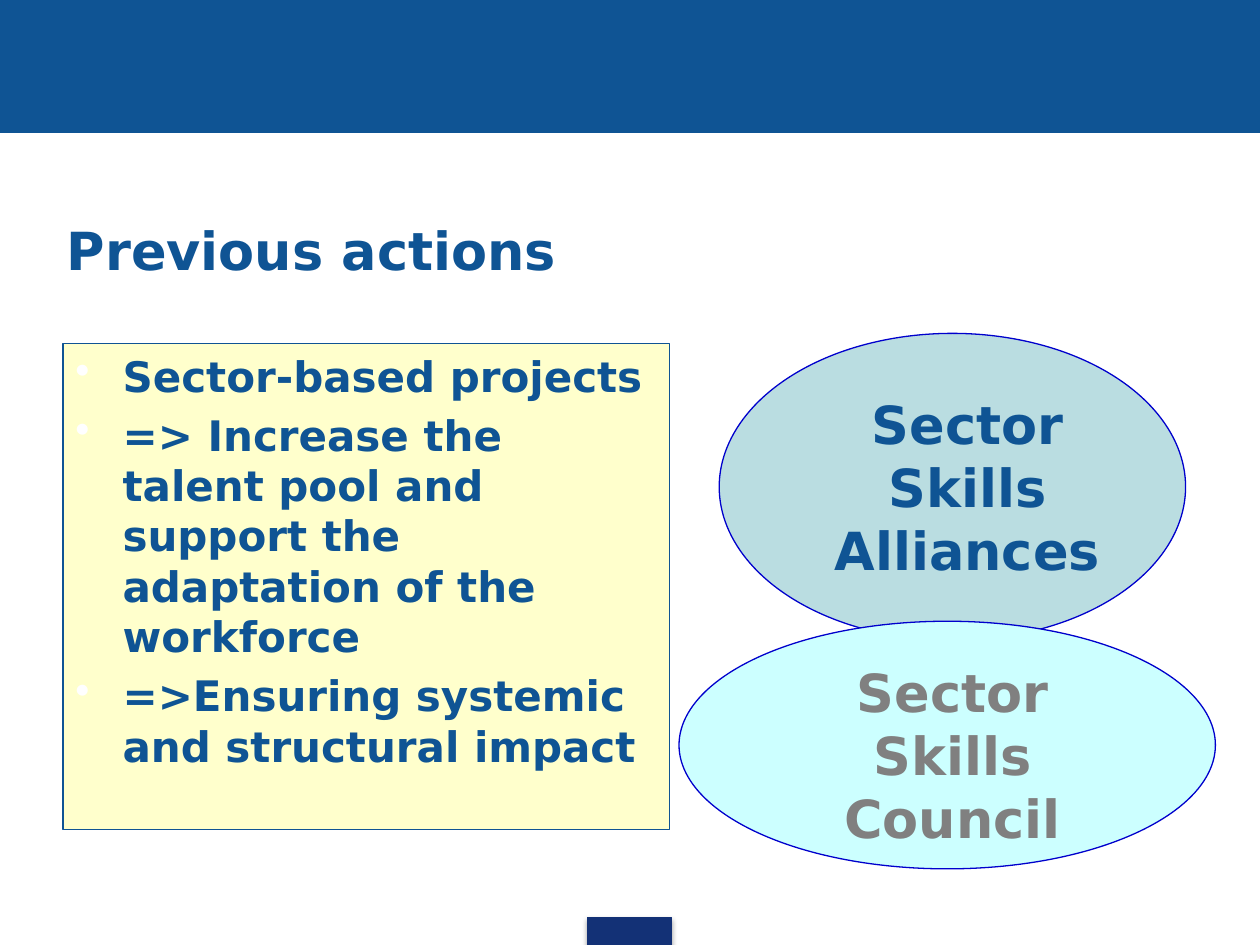
from dataclasses import dataclass

from lxml.etree import SubElement
from pptx import Presentation
from pptx.dml.color import RGBColor
from pptx.enum.shapes import MSO_SHAPE as Shape
from pptx.enum.text import MSO_ANCHOR as Anchor, MSO_AUTO_SIZE as AutoSize, PP_ALIGN as Align
from pptx.oxml.ns import qn
from pptx.util import Pt

COLORS = {
    "blue": "0F5494",
    "navy": "133176",
    "cream": "FFFFCC",
    "teal": "BADDE1",
    "aqua": "CCFFFF",
    "outline": "0000CC",
    "gray": "808080",
    "white": "FFFFFF",
    "black": "000000",
}
FONT = {"name": "DejaVu Sans", "bold": True}
BULLET_INDENT = 27


@dataclass(frozen=True)
class Box:
    left: float
    top: float
    width: float
    height: float

    def emu(self) -> tuple:
        return tuple(Pt(v) for v in (self.left, self.top, self.width, self.height))


@dataclass(frozen=True)
class Bubble:
    oval: Box
    label: Box
    text: str
    fill: str
    color: str


BUBBLES = (
    Bubble(Box(411, 190.5, 266.5, 175.5), Box(462.2, 220.3, 181.4, 116.6),
           "Sector Skills Alliances", "teal", "blue"),
    Bubble(Box(388, 355, 306.5, 141.5), Box(453.6, 373.7, 181.4, 116.6),
           "Sector Skills Council", "aqua", "gray"),
)
ACTIONS = (
    "Sector-based projects",
    "=> Increase the talent pool and support the adaptation of the workforce",
    "=>Ensuring systemic and structural impact",
)


def rgb(name: str) -> RGBColor:
    return RGBColor.from_string(COLORS[name])


def add_filled(s, kind, box: Box, fill: str, line: str):
    sp = s.shapes.add_shape(kind, *box.emu())
    sp.shadow.inherit = False
    sp.fill.solid()
    sp.fill.fore_color.rgb = rgb(fill)
    sp.line.color.rgb = rgb(line)
    sp.line.width = Pt(0.75)
    return sp


def add_shadow(sp) -> None:
    """Give the shape a soft shadow that falls straight down."""
    effects = sp._element.spPr.find(qn("a:effectLst"))
    shadow = SubElement(effects, qn("a:outerShdw"), blurRad=str(Pt(3.1)),
                        dist=str(Pt(1.8)), dir="5400000", rotWithShape="0")
    color = SubElement(shadow, qn("a:srgbClr"), val=COLORS["black"])
    SubElement(color, qn("a:alpha"), val="35000")


def add_bullet(p) -> None:
    pPr = p._p.get_or_add_pPr()
    pPr.set("marL", str(Pt(BULLET_INDENT)))
    pPr.set("indent", str(-Pt(BULLET_INDENT)))
    color = SubElement(pPr, qn("a:buClr"))
    SubElement(color, qn("a:srgbClr"), val=COLORS["white"])
    SubElement(pPr, qn("a:buChar"), char="•")


def write(p, text: str, size: float, color: str, align=Align.LEFT) -> None:
    p.alignment = align
    r = p.add_run()
    r.text = text
    for key, value in {**FONT, "size": Pt(size)}.items():
        setattr(r.font, key, value)
    r.font.color.rgb = rgb(color)


def add_label(s, box: Box, text: str, color: str, align, **frame):
    tf = s.shapes.add_textbox(*box.emu()).text_frame
    for key, value in {"word_wrap": True, **frame}.items():
        setattr(tf, key, value)
    write(tf.paragraphs[0], text, 30, color, align)


def add_actions(s, box: Box) -> None:
    tf = add_filled(s, Shape.RECTANGLE, box, "cream", "blue").text_frame
    tf.word_wrap = True
    tf.vertical_anchor = Anchor.TOP
    for i, text in enumerate(ACTIONS):
        p = tf.add_paragraph() if i else tf.paragraphs[0]
        p.space_before = Pt(5 if i else 0)
        add_bullet(p)
        write(p, text, 24, "blue")


def add_bubble(s, bubble: Bubble) -> None:
    add_filled(s, Shape.OVAL, bubble.oval, bubble.fill, "outline")
    add_label(s, bubble.label, bubble.text, bubble.color, Align.CENTER,
              auto_size=AutoSize.SHAPE_TO_FIT_TEXT)


def main() -> None:
    prs = Presentation()
    prs.slide_width, prs.slide_height = Pt(720), Pt(540)
    s = prs.slides.add_slide(prs.slide_layouts[6])
    add_filled(s, Shape.RECTANGLE, Box(0, 0, 720, 75.5), "blue", "blue")
    add_shadow(add_filled(s, Shape.RECTANGLE, Box(335.6, 524.2, 48.2, 15.8), "navy", "navy"))
    add_label(s, Box(3, 106, 436, 73.5), "Previous actions", "blue", Align.LEFT,
              vertical_anchor=Anchor.MIDDLE, margin_left=Pt(35.2))
    add_actions(s, Box(36, 196.5, 346.5, 277.5))
    for bubble in BUBBLES:
        add_bubble(s, bubble)
    prs.save("out.pptx")


if __name__ == "__main__":
    main()
